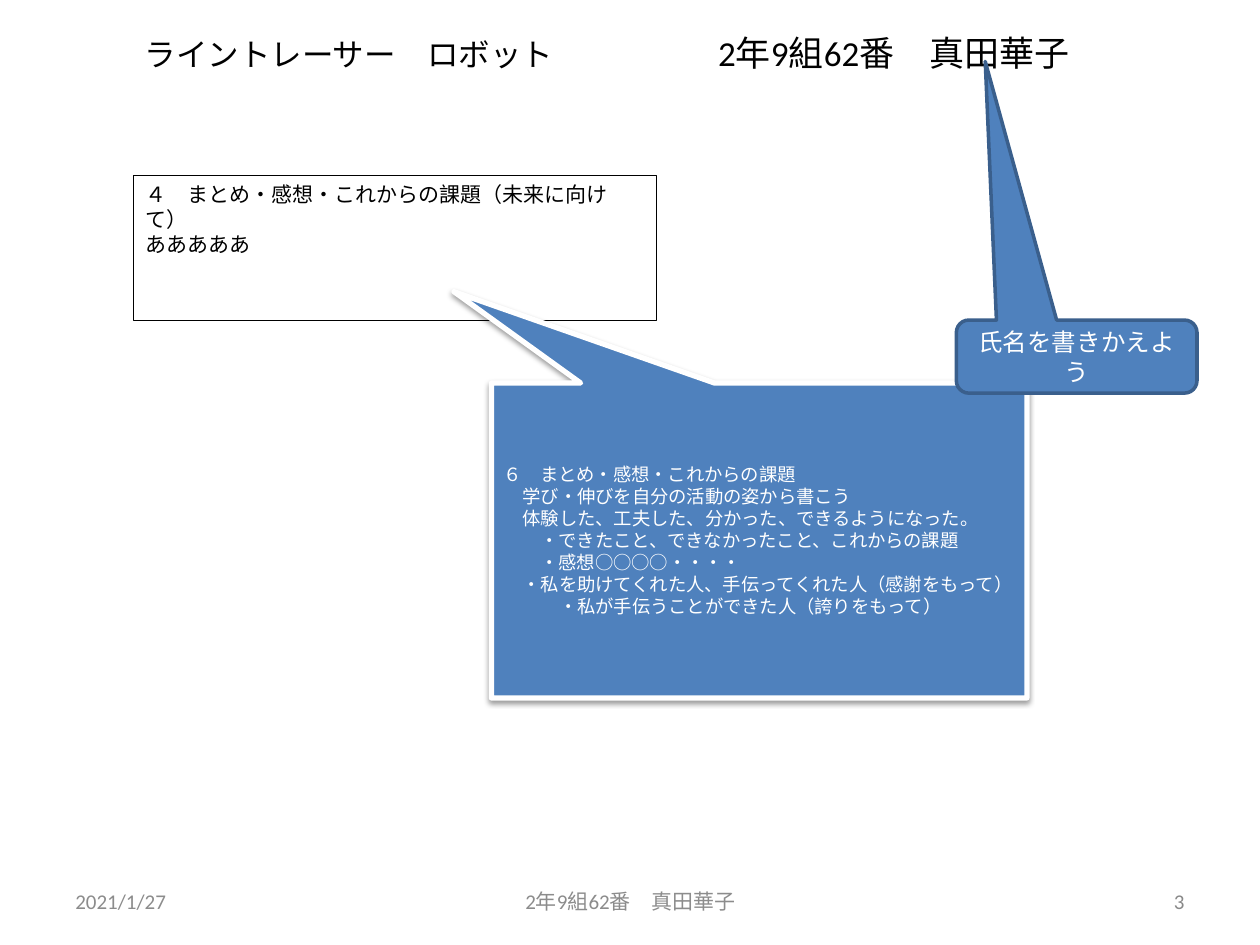
from lxml import etree
from pptx import Presentation
from pptx.dml.color import RGBColor
from pptx.enum import shapes, text
from pptx.oxml import ns
from pptx.util import Inches, Pt

HUES = {
    "black": "000000",
    "white": "FFFFFF",
    "blue": "4F81BD",
    "navy": "3A5F8C",
    "gray": "8C8C8C",
    "ash": "898989",
}
ALIGN = {
    "l": text.PP_ALIGN.LEFT,
    "c": text.PP_ALIGN.CENTER,
    "r": text.PP_ALIGN.RIGHT,
}
OWNER = "2年9組62番　真田華子"
KIND = shapes.MSO_SHAPE


def hue(name):
    return RGBColor.from_string(HUES[name])


def write(shape, lines, size=12, color="black", align="l", font="Calibri", mid=True, shifts=()):
    frame = shape.text_frame
    frame.word_wrap = True
    frame.vertical_anchor = text.MSO_ANCHOR.MIDDLE if mid else text.MSO_ANCHOR.TOP
    for i, line in enumerate(lines):
        para = frame.paragraphs[0] if i == 0 else frame.add_paragraph()
        para.alignment = ALIGN[align]
        run = para.add_run()
        run.text = line
        run.font.size = Pt(size)
        run.font.name = font
        run.font.color.rgb = hue(color)
        if shifts:
            props = para._p.get_or_add_pPr()
            props.set("marL", str(Inches(shifts[i])))
            props.set("indent", "0")


class Board:
    def __init__(self, slide):
        self.slide = slide

    def label(self, box, line, **style):
        item = self.slide.shapes.add_textbox(*map(Inches, box))
        write(item, [line], **style)

    def panel(self, kind, box, lines, fill, edge, width, tips=(), **style):
        item = self.slide.shapes.add_shape(kind, *map(Inches, box))
        item.shadow.inherit = False
        item.fill.solid()
        item.fill.fore_color.rgb = hue(fill)
        item.line.color.rgb = hue(edge)
        item.line.width = Pt(width)
        for i, tip in enumerate(tips):
            item.adjustments[i] = tip
        write(item, lines, **style)
        return item

    def shade(self, item, blur, dist, alpha):
        glow = item._element.spPr.find(ns.qn("a:effectLst"))
        outer = etree.SubElement(
            glow, ns.qn("a:outerShdw"), blurRad=str(Pt(blur)), dist=str(Pt(dist)),
            dir="5400000", rotWithShape="0")
        tone = etree.SubElement(outer, ns.qn("a:srgbClr"), val=HUES["black"])
        etree.SubElement(tone, ns.qn("a:alpha"), val=str(alpha * 1000))


def main():
    deck = Presentation()
    deck.slide_width, deck.slide_height = Inches(10), Inches(7.5)
    board = Board(deck.slides.add_slide(deck.slide_layouts[6]))

    foot = [
        (0.5, 2.33, "2021/1/27", "l", "gray"),
        (3.42, 3.17, OWNER, "c", "gray"),
        (7.17, 2.33, "3", "r", "ash"),
    ]
    for left, width, line, align, color in foot:
        board.label((left, 6.95, width, 0.4), line, align=align, color=color)

    board.panel(
        KIND.RECTANGLE, (1.06, 1.39, 4.15, 1.15),
        ["４　まとめ・感想・これからの課題（未来に向けて）", "あああああ"],
        "white", "black", 0.25, mid=False)

    guide = [
        ("６　まとめ・感想・これからの課題", 0),
        ("学び・伸びを自分の活動の姿から書こう", 0.15),
        ("体験した、工夫した、分かった、できるようになった。", 0.15),
        ("・できたこと、できなかったこと、これからの課題", 0.29),
        ("・感想○○○○・・・・", 0.29),
        ("・私を助けてくれた人、手伝ってくれた人（感謝をもって）", 0.15),
        ("・私が手伝うことができた人（誇りをもって）", 0.44),
    ]
    lines, shifts = zip(*guide)
    advice = board.panel(
        KIND.RECTANGULAR_CALLOUT, (3.9, 3.04, 4.25, 2.5), lines,
        "blue", "white", 3, tips=(-0.57, -0.79),
        size=10.5, color="white", shifts=shifts)
    board.shade(advice, 3.1, 1.6, 38)

    board.label((5.04, 0.11, 4.11, 0.61), OWNER, size=20, align="c")
    board.panel(
        KIND.ROUNDED_RECTANGULAR_CALLOUT, (7.59, 2.54, 1.91, 0.58),
        ["氏名を書きかえよう"], "blue", "navy", 2,
        tips=(-0.38, -4.04, 0.17), size=14, color="white", align="c")
    board.label(
        (0.5, 0.22, 4.54, 0.42), "ライントレーサー　ロボット",
        size=18, align="c", font="Noto Sans CJK JP")

    deck.save("out.pptx")


if __name__ == "__main__":
    main()
